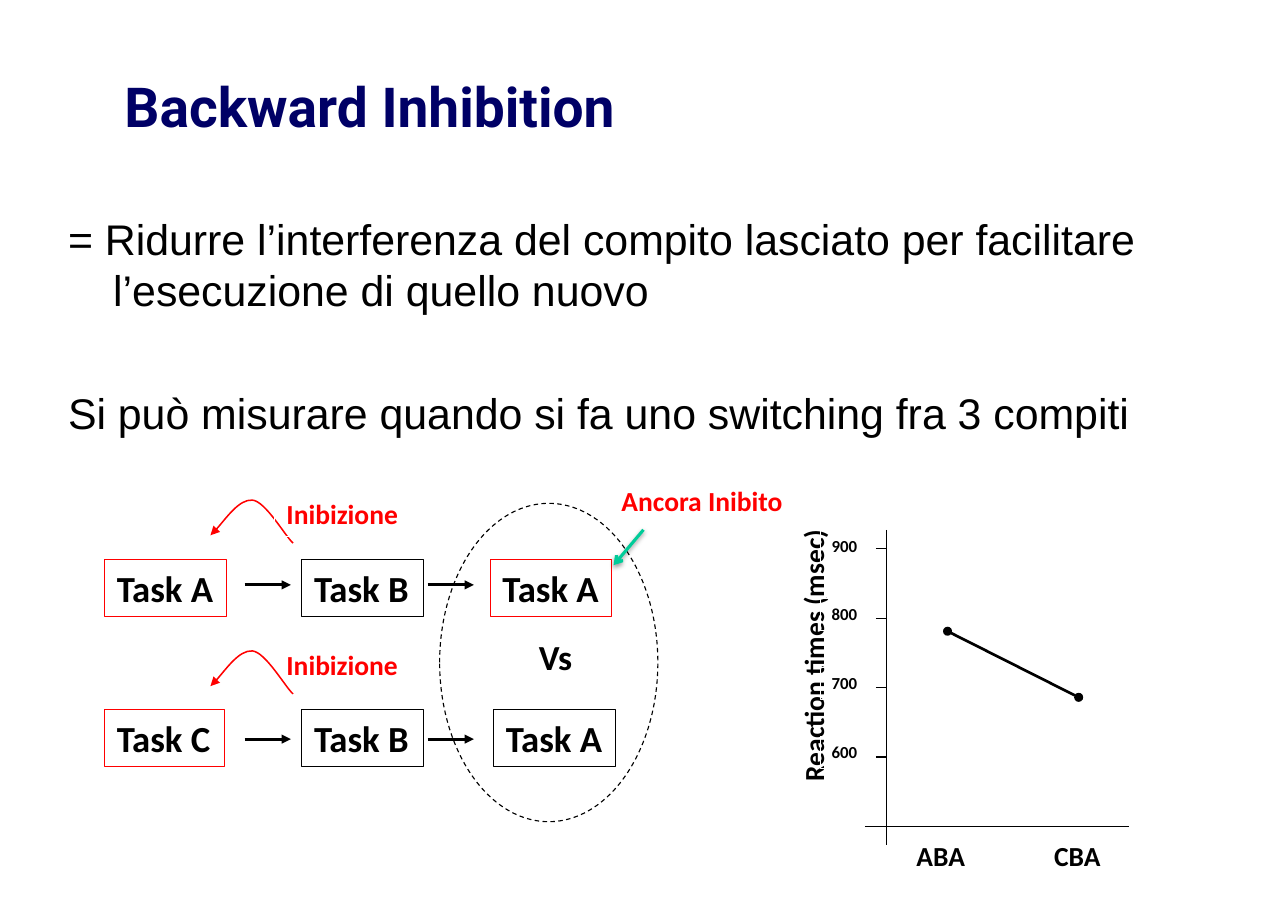
"""Build the Backward Inhibition slide with its task diagram and reaction time plot."""
from lxml import etree
from pptx import Presentation
from pptx import util as u
from pptx.dml.color import RGBColor
from pptx.enum import dml, shapes, text
from pptx.oxml import ns

COLORS = {
    "black": "000000",
    "white": "FFFFFF",
    "red": "FF0000",
    "navy": "000066",
    "green": "00CC99",
}
TASK_INSETS = (7.9, 4.3)


def color(name):
    return RGBColor.from_string(COLORS[name])


def add_element(parent, tag, **attributes):
    return etree.SubElement(parent, ns.qn(tag), attributes)


def write(shape, *lines, size=18, font="Calibri", ink="black", bold=True,
          wrap=False, anchor="TOP", insets=(7.2, 3.6), hanging=0, gap=0, grow=True):
    frame = shape.text_frame
    frame.word_wrap = wrap
    frame.auto_size = getattr(text.MSO_AUTO_SIZE, "SHAPE_TO_FIT_TEXT" if grow else "NONE")
    frame.vertical_anchor = getattr(text.MSO_ANCHOR, anchor)
    frame.margin_left = frame.margin_right = u.Pt(insets[0])
    frame.margin_top = frame.margin_bottom = u.Pt(insets[1])
    for index, line in enumerate(lines):
        paragraph = frame.add_paragraph() if index else frame.paragraphs[0]
        paragraph.text = line
        paragraph.alignment = text.PP_ALIGN.LEFT
        paragraph.space_before = u.Pt(gap if index else 0)
        if hanging:
            properties = paragraph._p.get_or_add_pPr()
            properties.set("marL", str(u.Pt(hanging)))
            properties.set("indent", str(-u.Pt(hanging)))
        paragraph.font.size = u.Pt(size)
        paragraph.font.name = font
        paragraph.font.bold = bold
        paragraph.font.color.rgb = color(ink)


def style_line(shape, ink, width, start=None, end=None):
    shape.line.color.rgb = color(ink)
    shape.line.width = u.Pt(width)
    outline = shape.line._get_or_add_ln()
    for tag, head in (("a:headEnd", start), ("a:tailEnd", end)):
        if head:
            add_element(outline, tag, type=head)


def add_outline(slide, kind, bounds, ink="white"):
    shape = slide.shapes.add_shape(kind, *map(u.Pt, bounds))
    shape.shadow.inherit = False
    shape.fill.background()
    style_line(shape, ink, 0.75)
    return shape


def add_label(slide, words, bounds, border="white", **style):
    shape = add_outline(slide, shapes.MSO_SHAPE.RECTANGLE, bounds, border)
    write(shape, words, **style)
    return shape


def add_text(slide, *lines, bounds, **style):
    write(slide.shapes.add_textbox(*map(u.Pt, bounds)), *lines, **style)


def add_line(slide, begin, finish, ink="black", width=0.75, start=None, end=None):
    line = slide.shapes.add_connector(
        shapes.MSO_CONNECTOR.STRAIGHT, *map(u.Pt, begin + finish))
    style_line(line, ink, width, start, end)
    return add_element(line._element.spPr, "a:effectLst")


def add_inhibition_arc(slide, drop):
    points = [(191.5, 355), (186.5, 350.6), (173.5, 327.6), (164.9, 326.9),
              (156.2, 326.2), (143.3, 344.9), (137.5, 349.9)]
    start, *others = [(u.Pt(x), u.Pt(y + drop)) for x, y in points]
    builder = slide.shapes.build_freeform(*start)
    builder.add_line_segments(others, close=False)
    arc = builder.convert_to_shape()
    arc.shadow.inherit = False
    arc.fill.background()
    style_line(arc, "red", 1, end="triangle")
    outline = next(arc._element.iter(ns.qn("a:path")))
    segments = outline.findall(ns.qn("a:lnTo"))
    for first in range(0, len(segments), 3):
        curve = add_element(outline, "a:cubicBezTo")
        for segment in segments[first:first + 3]:
            curve.append(segment[0])
            outline.remove(segment)


def add_plot(slide):
    for words, left, width in (("ABA", 591.8, 46.8), ("CBA", 681.8, 45.4)):
        add_label(slide, words, (left, 544.6, width, 28.8))
    add_line(slide, (579.6, 346.3), (579.6, 552.2))
    add_line(slide, (565.2, 540), (738, 540))
    add_line(slide, (704.9, 455.8), (619.2, 412.6), width=1.75, start="oval", end="oval")
    axis_title = add_label(slide, "Reaction times (msec)", (434.9, 406.8, 193, 28.8), wrap=True)
    axis_title.rotation = 270
    for index, value in enumerate(("900", "800", "700", "600")):
        tick = 358.6 + 45.4 * index
        add_line(slide, (572.4, tick), (579.6, tick))
        add_label(slide, value, (536.4, 346.3 + 45 * index, 31.7, 20.9), size=11)


def add_tasks(slide):
    rows = (
        (365.8, 382.3, (("Task A", 68.4, "red"), ("Task B", 197.3, "black"),
                        ("Task A", 320.4, "red"))),
        (463.7, 483.1, (("Task C", 68.4, "red"), ("Task B", 197.3, "black"),
                        ("Task A", 322.6, "black"))),
    )
    for top, arrow, tasks in rows:
        for name, left, border in tasks:
            width = 78.5 if name == "Task C" else 79.5
            add_label(slide, name, (left, top, width, 37.4), border,
                      size=24, insets=TASK_INSETS)
        for left in (159.8, 279.4):
            add_line(slide, (left, arrow), (left + 30.3, arrow), width=2, end="triangle")


def add_inhibition(slide):
    comparison = add_outline(slide, shapes.MSO_SHAPE.OVAL, (287.3, 329, 142.6, 208.1), "black")
    comparison.line.dash_style = dml.MSO_LINE.DASH
    add_text(slide, "Vs", bounds=(344.2, 411.1, 38.9, 36), size=23, insets=TASK_INSETS)
    label = {"ink": "red", "insets": TASK_INSETS}
    add_inhibition_arc(slide, 0)
    add_label(slide, "Inibizione", (179.3, 320.4, 90, 30.2), **label)
    add_inhibition_arc(slide, 98.6)
    add_text(slide, "Inibizione", bounds=(179.3, 419, 89.3, 30.2), **label)
    add_label(slide, "Ancora Inibito", (398.2, 311.8, 122.4, 30.2), **label)
    effects = add_line(slide, (420.5, 346.3), (401, 369.4), "green", 2, end="arrow")
    shadow = add_element(effects, "a:outerShdw", blurRad=str(u.Pt(3.1)),
                         dist=str(u.Pt(1.6)), dir="5400000", rotWithShape="0")
    shade = add_element(shadow, "a:srgbClr", val=COLORS["black"])
    add_element(shade, "a:alpha", val="38000")


def main():
    presentation = Presentation()
    presentation.slide_width = u.Pt(841.68)
    presentation.slide_height = u.Pt(595.44)
    slide = presentation.slides.add_slide(presentation.slide_layouts[5])
    title = slide.shapes.title
    title.left, title.top, title.width, title.height = map(u.Pt, (73.4, 43.2, 768.2, 51.8))
    write(title, "Backward Inhibition", size=36, font="Roboto", ink="navy",
          wrap=True, anchor="MIDDLE", insets=(7.9, 3.6), grow=False)
    add_text(slide,
             "= Ridurre l’interferenza del compito lasciato per facilitare "
             "l’esecuzione di quello nuovo",
             "Si può misurare quando si fa uno switching fra 3 compiti",
             bounds=(37.4, 135.4, 774, 160), size=28, font="Arial", bold=False,
             wrap=True, hanging=29.5, gap=46.5, grow=False)
    add_plot(slide)
    add_tasks(slide)
    add_inhibition(slide)
    presentation.save("out.pptx")


if __name__ == "__main__":
    main()
